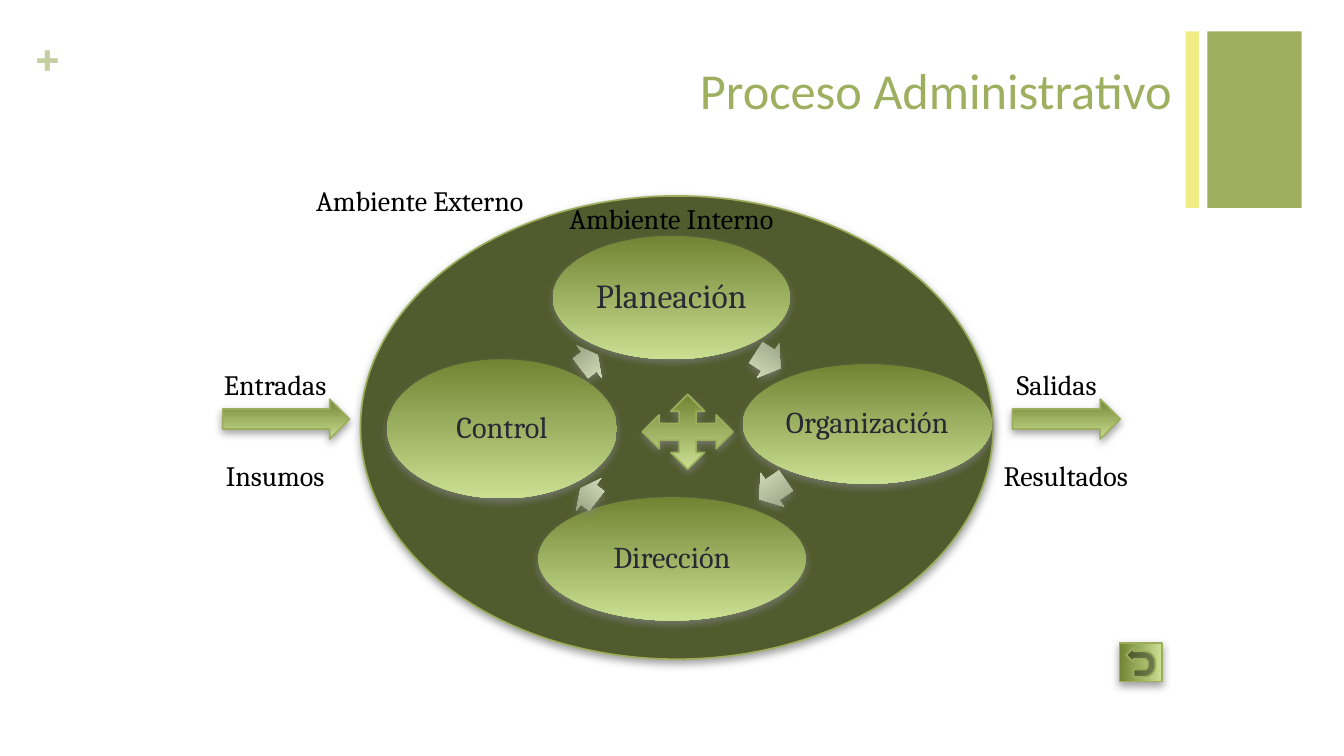
import pptx
import pptx.util
import pptx.dml.color
import pptx.enum.shapes
import pptx.enum.text
from lxml import etree

Inches, Pt = pptx.util.Inches, pptx.util.Pt
RGBColor = pptx.dml.color.RGBColor
MSO = pptx.enum.shapes.MSO_SHAPE
ALIGN = pptx.enum.text.PP_ALIGN
ANCHOR = pptx.enum.text.MSO_ANCHOR

GREEN = RGBColor(0x9E, 0xB0, 0x60)
PALE_GREEN = RGBColor(0xC5, 0xD0, 0xA0)
YELLOW = RGBColor(0xF2, 0xEC, 0x86)
DARK_GREEN = RGBColor(0x51, 0x5B, 0x2D)
EDGE = RGBColor(0x9C, 0xAE, 0x5C)
INK = RGBColor(0x29, 0x29, 0x34)
BLACK = RGBColor(0, 0, 0)
STRONG = (RGBColor(0x71, 0x84, 0x33), RGBColor(0xCB, 0xDF, 0x93))
SOFT = (RGBColor(0x8B, 0x93, 0x76), RGBColor(0xE1, 0xEB, 0xC7))

# Boxes are (left, top, width, height) in inches
TITLE = ("Proceso Administrativo", (0.61, 0.44, 9.18, 1.02))
BARS = [((9.98, 0.26, 0.78, 1.46), GREEN), ((9.8, 0.26, 0.11, 1.46), YELLOW)]
ENVIRONMENT = (2.98, 1.62, 5.23, 3.83)
STAGES = [
    ("Planeación", 20, (4.57, 1.95, 1.96, 1.02)),
    ("Organización", 18, (6.14, 3.01, 2.06, 0.99)),
    ("Dirección", 18, (4.45, 4.11, 2.21, 1.02)),
    ("Control", 18, (3.2, 2.97, 1.9, 1.15)),
]
# The arrow that leaves each stage, with its rotation
STAGE_ARROWS = [
    ((6.23, 2.81, 0.24, 0.34), 32.8),
    ((6.25, 3.88, 0.27, 0.34), 145.3),
    ((4.78, 3.92, 0.17, 0.34), 217.6),
    ((4.78, 2.82, 0.18, 0.34), 322.4),
]
SYMBOLS = [
    (MSO.RIGHT_ARROW, (8.37, 3.3, 0.89, 0.33), 0),
    (MSO.RIGHT_ARROW, (1.84, 3.3, 1.05, 0.33), 0),
    (MSO.QUAD_ARROW, (5.31, 3.26, 0.75, 0.62), 0),
    (MSO.ACTION_BUTTON_RETURN, (9.27, 5.3, 0.32, 0.35), 270),
]
LABELS = [
    ("Ambiente Interno", (4.44, 1.62, 2.22, 0.38)),
    ("Ambiente Externo", (2.36, 1.47, 2.22, 0.38)),
    ("Entradas", (1.66, 2.99, 1.23, 0.38)),
    ("Resultados", (8.12, 3.74, 1.38, 0.38)),
    ("Salidas", (8.12, 2.99, 1.23, 0.38)),
    ("Insumos", (1.66, 3.74, 1.23, 0.38)),
]

A = "http://schemas.openxmlformats.org/drawingml/2006/main"
SHADOW = (f'<a:outerShdw xmlns:a="{A}" blurRad="{Pt(5)}" dist="{Pt(2)}" dir="5400000" '
          'algn="ctr" rotWithShape="0"><a:srgbClr val="808080">'
          '<a:alpha val="75000"/></a:srgbClr></a:outerShdw>')


def inches(box):
    return [Inches(v) for v in box]


def add_shape(slide, kind, box, fill, line=None, rotation=0, shadow=True):
    """Add a shape; fill is one colour or a (top, bottom) pair for a gradient."""
    sp = slide.shapes.add_shape(kind, *inches(box))
    sp.rotation = rotation
    if isinstance(fill, RGBColor):
        sp.fill.solid()
        sp.fill.fore_color.rgb = fill
    else:
        sp.fill.gradient()
        sp.fill.gradient_angle = 270
        for stop, position, color in zip(sp.fill.gradient_stops, (0, 1), fill):
            stop.position = position
            stop.color.rgb = color
    if line is None:
        sp.line.fill.background()
    else:
        sp.line.color.rgb = line
        sp.line.width = Pt(1)
    sp.shadow.inherit = False
    if shadow:
        effects = sp._element.spPr.find(f"{{{A}}}effectLst")
        effects.append(etree.fromstring(SHADOW))
    return sp


def set_text(sp, text, size, color, font="Cambria", align=ALIGN.CENTER,
             anchor=ANCHOR.TOP, margin=None):
    tf = sp.text_frame
    tf.word_wrap = True
    tf.vertical_anchor = anchor
    if margin is not None:
        tf.margin_left = tf.margin_right = Inches(margin)
        tf.margin_top = tf.margin_bottom = Inches(margin)
    p = tf.paragraphs[0]
    p.text = text
    p.alignment = align
    p.font.name = font
    p.font.size = Pt(size)
    p.font.color.rgb = color
    return p


def main():
    prs = pptx.Presentation()
    prs.slide_width, prs.slide_height = Inches(11.11), Inches(6.25)
    slide = prs.slides.add_slide(prs.slide_layouts[5])

    for box, color in BARS:
        add_shape(slide, MSO.RECTANGLE, box, color, shadow=False)
    plus = slide.shapes.add_textbox(*inches((0.27, 0.21, 0.32, 0.5)))
    set_text(plus, "+", 30, PALE_GREEN, align=ALIGN.LEFT, margin=0).font.bold = True

    text, box = TITLE
    title = slide.shapes.title
    title.left, title.top, title.width, title.height = inches(box)
    set_text(title, text, 30, GREEN, font="Calibri", align=ALIGN.RIGHT)

    add_shape(slide, MSO.OVAL, ENVIRONMENT, DARK_GREEN, line=EDGE)
    for (text, size, box), (arrow_box, angle) in zip(STAGES, STAGE_ARROWS):
        oval = add_shape(slide, MSO.OVAL, box, STRONG)
        p = set_text(oval, text, size, INK, anchor=ANCHOR.MIDDLE, margin=0.03)
        p.line_spacing = 0.9
        arrow = add_shape(slide, MSO.RIGHT_ARROW, arrow_box, SOFT, rotation=angle)
        arrow.adjustments[0] = 0.6

    for kind, box, angle in SYMBOLS:
        add_shape(slide, kind, box, STRONG, line=EDGE, rotation=angle)
    for text, box in LABELS:
        set_text(slide.shapes.add_textbox(*inches(box)), text, 16.7, BLACK)

    prs.save("out.pptx")


if __name__ == "__main__":
    main()
